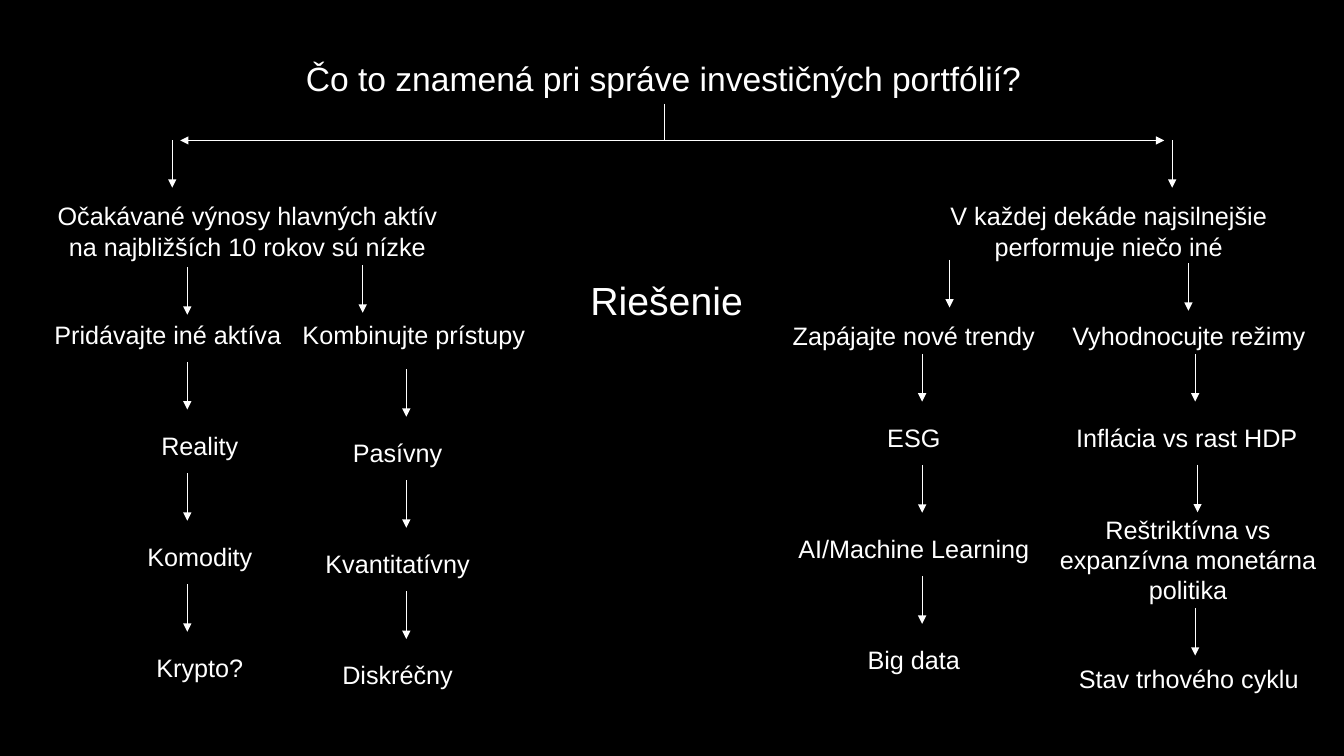
"""Build the slide on what low expected returns mean for portfolios."""
from dataclasses import dataclass

import lxml.etree
import pptx
import pptx.dml.color
import pptx.enum.shapes
import pptx.enum.text
import pptx.oxml.ns
import pptx.util

Cm = pptx.util.Cm
LINK = pptx.enum.shapes.MSO_CONNECTOR
ALIGN = pptx.enum.text.PP_ALIGN
WHITE, BLACK = "FFFFFF", "000000"
DROP, STEP, LEAD = 1.2, 2.8, 1.6
WIDE, LOW = 7.8, 1.02


@dataclass
class Note:
    text: str
    left: float
    top: float
    width: float = WIDE
    height: float = LOW
    size: int = 18
    align: ALIGN = ALIGN.CENTER


@dataclass
class Arrow:
    left: float
    top: float


@dataclass
class Chain:
    words: list[str]
    left: float
    top: float
    width: float
    axis: float


@dataclass
class Bend:
    start: tuple[float, float]
    end: tuple[float, float]
    turn: int


TITLE = Note("Čo to znamená pri správe investičných portfólií?", 3.12, 1.32, 27.2, 1.27, 24)
NOTES = [
    Note("Očakávané výnosy hlavných aktív na najbližších 10 rokov sú nízke", 0.94, 4.93, 10.59, 1.8),
    Note("V každej dekáde najsilnejšie performuje niečo iné", 22.94, 4.93, 10, 1.8),
    Note("Riešenie", 14.63, 6.83, 5, 1.45, 28, ALIGN.LEFT),
    Note("Pridávajte iné aktíva", 0.33, 7.92),
    Note("Kombinujte prístupy", 6.53, 7.92),
    Note("Zapájajte nové trendy", 19.13, 7.95),
    Note("Vyhodnocujte režimy", 26.06, 7.95),
    Note("Inflácia vs rast HDP", 26.01, 10.52),
    Note("Reštriktívna vs expanzívna monetárna politika", 26.04, 12.83, height=2.57),
    Note("Stav trhového cyklu", 26.06, 16.59),
]
ARROWS = [
    Arrow(4.34, 3.53), Arrow(29.54, 3.53),
    Arrow(4.72, 6.73), Arrow(9.14, 6.68), Arrow(23.93, 6.55), Arrow(29.95, 6.63),
    Arrow(30.12, 8.92), Arrow(30.18, 11.71), Arrow(30.12, 15.32),
]
CHAINS = [
    Chain(["Reality", "Komodity", "Krypto?"], 0.64, 10.72, 8.79, 4.72),
    Chain(["Pasívny", "Kvantitatívny", "Diskréčny"], 6.12, 10.9, WIDE, 10.24),
    Chain(["ESG", "AI/Machine Learning", "Big data"], 19.13, 10.52, WIDE, 23.24),
]
BENDS = [
    Bend((10.18, -3.02), (11.1, 9.18), 90),
    Bend((23.5, -3.22), (22.58, 9.38), 270),
]


def paint(target, tone: str) -> None:
    target.rgb = pptx.dml.color.RGBColor.from_string(tone)


def write(shape, note: Note) -> None:
    shape.left, shape.top = Cm(note.left), Cm(note.top)
    shape.width, shape.height = Cm(note.width), Cm(note.height)
    frame = shape.text_frame
    frame.text = note.text
    frame.word_wrap = True
    frame.auto_size = pptx.enum.text.MSO_AUTO_SIZE.SHAPE_TO_FIT_TEXT
    frame.vertical_anchor = pptx.enum.text.MSO_ANCHOR.TOP
    para = frame.paragraphs[0]
    para.alignment = note.align
    font = para.runs[0].font
    font.name, font.size = "Arial", pptx.util.Pt(note.size)
    paint(font.color, WHITE)


def place(slide, note: Note) -> None:
    write(slide.shapes.add_textbox(0, 0, Cm(note.width), Cm(note.height)), note)


def link(slide, kind: LINK, start: tuple[float, float], end: tuple[float, float]):
    line = slide.shapes.add_connector(kind, *map(Cm, start + end))
    line.line.width = pptx.util.Pt(0.5)
    line.line.fill.solid()
    paint(line.line.fill.fore_color, WHITE)
    qn = pptx.oxml.ns.qn
    props = line._element.spPr
    lxml.etree.SubElement(props.find(qn("a:ln")), qn("a:tailEnd"), type="triangle")
    lxml.etree.SubElement(props, qn("a:effectLst"))
    return line


def drop(slide, arrow: Arrow) -> None:
    end = (arrow.left, arrow.top + DROP)
    link(slide, LINK.STRAIGHT, (arrow.left, arrow.top), end)


def curve(slide, bend: Bend) -> None:
    props = link(slide, LINK.ELBOW, bend.start, bend.end)._element.spPr
    props.find(pptx.oxml.ns.qn("a:prstGeom")).set("prst", "bentConnector2")
    props.find(pptx.oxml.ns.qn("a:xfrm")).set("rot", str(bend.turn * 60000))


def descend(slide, chain: Chain) -> None:
    for rank, word in enumerate(chain.words):
        top = chain.top + rank * STEP
        drop(slide, Arrow(chain.axis, top - LEAD))
        place(slide, Note(word, chain.left, top, chain.width))


def main() -> None:
    deck = pptx.Presentation()
    deck.slide_width, deck.slide_height = Cm(33.87), Cm(19.05)
    slide = deck.slides.add_slide(deck.slide_layouts[5])
    back = slide.background.fill
    back.solid()
    paint(back.fore_color, BLACK)
    write(slide.shapes.title, TITLE)
    for bend in BENDS:
        curve(slide, bend)
    for arrow in ARROWS:
        drop(slide, arrow)
    for note in NOTES:
        place(slide, note)
    for chain in CHAINS:
        descend(slide, chain)
    deck.save("out.pptx")


if __name__ == "__main__":
    main()
